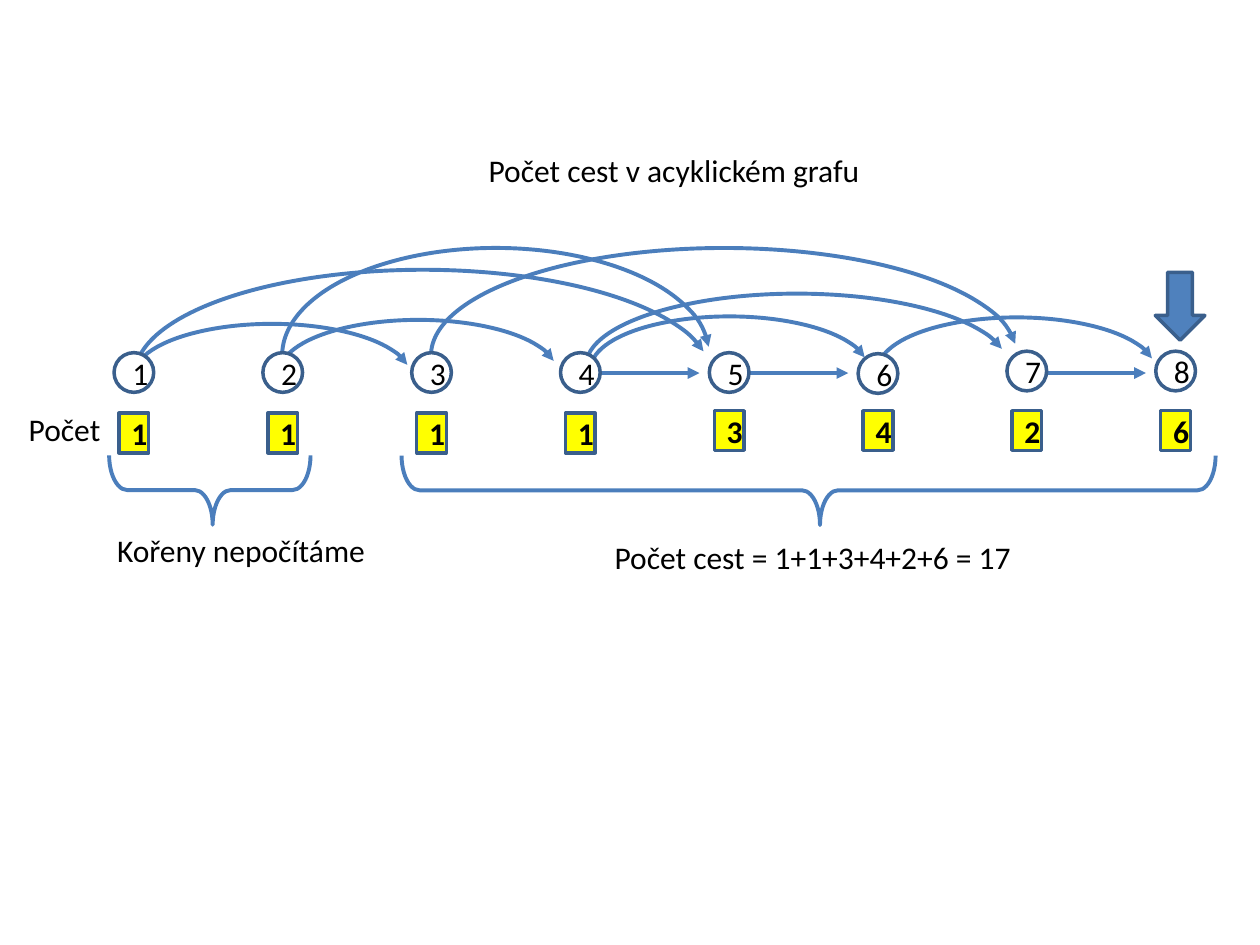
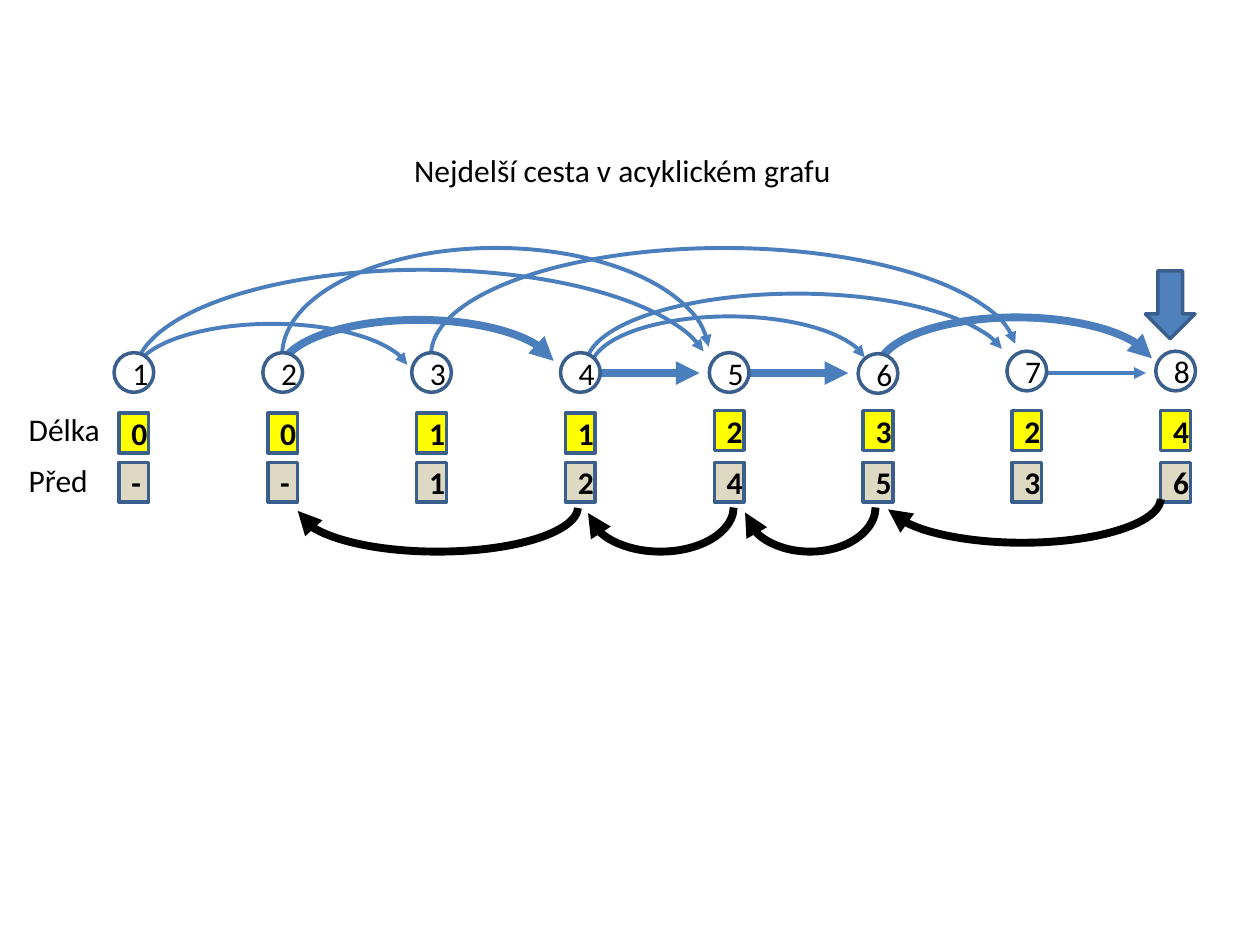
from lxml import etree
from pptx import Presentation
from pptx import util as u
from pptx.dml.color import RGBColor
from pptx.enum import shapes, text
from pptx.oxml.ns import qn

COLORS = {
    "edge": "4B7EBC",
    "outline": "3A5F8C",
    "marker": "4F81BD",
    "node": "FFFFFF",
    "value": "FFFF00",
    "predecessor": "DDD9C3",
    "black": "000000",
}
FONT = "Calibri"
FONT_SIZE = 18
THIN, THICK, OUTLINE = 2.25, 4.5, 2

# Lengths are in centimetres.
PITCH = 3
NODE_LEFT, NODE_SIZE = 2.3, 0.8
NODE_TOPS = [7.11, 7.11, 7.11, 7.11, 7.11, 7.13, 7.08, 7.08]
CELL_LEFT, CELL_WIDTH, CELL_HEIGHT = 2.4, 0.6, 0.8
VALUE_TOPS = [8.33] * 4 + [8.28] * 4
PREDECESSOR_TOPS = [9.32] * 8
LABEL_LEFT, LABEL_HEIGHT = 0.33, 1.02
TITLE_TOP = 2.92
EDGE_Y, EDGE_LENGTH = 7.52, 2

ARC_START, ARC_END, TALL_ARC_END = 108.25, 213.113, 214.654
# (from node, to node): (left, top, width, height, end angle)
ARC_EDGES = {
    (1, 3): (2.69, 6.53, 5.59, 2.11, ARC_END),
    (1, 5): (2.72, 5.44, 11.61, 4.24, ARC_END),
    (2, 5): (5.69, 5, 8.61, 4.32, TALL_ARC_END),
    (6, 8): (17.7, 6.4, 5.59, 2.11, ARC_END),
    (4, 6): (11.91, 6.38, 5.59, 2.11, ARC_END),
    (3, 7): (8.69, 5, 11.81, 4.32, TALL_ARC_END),
    (4, 7): (11.81, 5.92, 8.51, 2.92, ARC_END),
    (2, 4): (5.64, 6.45, 5.59, 2.11, ARC_END),
}
STRAIGHT_EDGES = [(4, 5), (5, 6), (7, 8)]
LONGEST_PATH = [(2, 4), (4, 5), (5, 6), (6, 8)]
BACKTRACK_ARCS = [
    (17.81, 9.14, 5.59, 1.8, ARC_END),
    (15.01, 9.32, 2.64, 1.8, ARC_END),
    (11.84, 9.32, 2.95, 1.8, ARC_END),
    (5.99, 9.32, 5.66, 1.8, 215.038),
]


def rgb(color):
    return RGBColor.from_string(COLORS[color])


def format_line(line, color, width):
    line.color.rgb = rgb(color)
    line.width = u.Pt(width)


def add_arrowhead(element):
    outline = element.spPr.find(qn("a:ln"))
    etree.SubElement(outline, qn("a:tailEnd"), type="triangle")


def format_text(text_frame, content, bold=False):
    text_frame.text = content
    font = text_frame.paragraphs[0].runs[0].font
    font.name = FONT
    font.size = u.Pt(FONT_SIZE)
    font.bold = bold
    font.color.rgb = rgb("black")


def add_shape(slide, kind, box, fill=None, line="outline", width=OUTLINE):
    shape = slide.shapes.add_shape(kind, *map(u.Cm, box))
    shape.shadow.inherit = False
    if fill:
        shape.fill.solid()
        shape.fill.fore_color.rgb = rgb(fill)
    else:
        shape.fill.background()
    format_line(shape.line, line, width)
    return shape


def add_label(slide, content, left, top, width):
    box = slide.shapes.add_textbox(*map(u.Cm, (left, top, width, LABEL_HEIGHT)))
    box.text_frame.word_wrap = False
    box.text_frame.auto_size = text.MSO_AUTO_SIZE.SHAPE_TO_FIT_TEXT
    format_text(box.text_frame, content)


def add_row(slide, kind, contents, left, tops, size, fill, bold=True):
    """Place one captioned shape under or at each graph node."""
    for index, (content, top) in enumerate(zip(contents, tops)):
        box = (left + index * PITCH, top, *size)
        shape = add_shape(slide, kind, box, fill)
        format_text(shape.text_frame, content, bold)
        shape.text_frame.paragraphs[0].alignment = text.PP_ALIGN.CENTER
        shape.text_frame.vertical_anchor = text.MSO_ANCHOR.MIDDLE


def add_cells(slide, contents, tops, fill):
    add_row(slide, shapes.MSO_SHAPE.RECTANGLE, contents, CELL_LEFT, tops,
            (CELL_WIDTH, CELL_HEIGHT), fill)


def add_arc(slide, arc, color="edge", width=THIN, rotation=0):
    *box, end = arc
    shape = add_shape(slide, shapes.MSO_SHAPE.ARC, box, line=color, width=width)
    shape.adjustments[0] = ARC_START
    shape.adjustments[1] = end
    shape.rotation = rotation
    add_arrowhead(shape._element)


def add_straight_edge(slide, node, width):
    start = NODE_LEFT + (node - 1) * PITCH + NODE_SIZE
    ends = (start, EDGE_Y, start + EDGE_LENGTH, EDGE_Y)
    connector = slide.shapes.add_connector(
        shapes.MSO_CONNECTOR.STRAIGHT, *map(u.Cm, ends))
    format_line(connector.line, "edge", width)
    add_arrowhead(connector._element)
    etree.SubElement(connector._element.spPr, qn("a:effectLst"))


def add_brace(slide, box):
    brace = add_shape(slide, shapes.MSO_SHAPE.RIGHT_BRACE, box,
                      line="edge", width=THIN)
    brace.adjustments[0] = 0.259
    brace.adjustments[1] = 0.486
    brace.rotation = 90


def add_graph(slide, thick_edges=()):
    def width(edge):
        return THICK if edge in thick_edges else THIN

    for edge, arc in ARC_EDGES.items():
        add_arc(slide, arc, width=width(edge))
    for edge in STRAIGHT_EDGES:
        add_straight_edge(slide, edge[0], width(edge))
    add_row(slide, shapes.MSO_SHAPE.OVAL, "12345678", NODE_LEFT, NODE_TOPS,
            (NODE_SIZE, NODE_SIZE), "node", bold=False)


def add_marker(slide, left, top):
    add_shape(slide, shapes.MSO_SHAPE.DOWN_ARROW, (left, top, 1, 1.37), "marker")


def add_path_count_slide(slide):
    add_graph(slide)
    add_cells(slide, "11113426", VALUE_TOPS, "value")
    add_marker(slide, 23.29, 5.49)
    add_label(slide, "Počet cest v acyklickém grafu", 9.6, TITLE_TOP, 8.08)
    add_label(slide, "Počet", LABEL_LEFT, 8.15, 1.98)
    add_brace(slide, (15.6, 1.68, 1.4, 16.41))
    add_label(slide, "Počet cest = 1+1+3+4+2+6 = 17", 12.14, 10.72, 8.61)
    add_brace(slide, (3.53, 7.85, 1.4, 4.06))
    add_label(slide, "Kořeny nepočítáme", 2.11, 10.59, 5.56)


def add_longest_path_slide(slide):
    add_graph(slide, LONGEST_PATH)
    add_cells(slide, "00112324", VALUE_TOPS, "value")
    add_marker(slide, 23.09, 5.46)
    add_label(slide, "Nejdelší cesta v acyklickém grafu", 8.1, TITLE_TOP, 8.99)
    add_cells(slide, "--124536", PREDECESSOR_TOPS, "predecessor")
    add_label(slide, "Před", LABEL_LEFT, 9.17, 1.73)
    add_label(slide, "Délka", LABEL_LEFT, 8.15, 1.96)
    for arc in BACKTRACK_ARCS:
        add_arc(slide, arc, "black", THICK, rotation=180)


def main():
    presentation = Presentation()
    presentation.slide_width = u.Cm(25.4)
    presentation.slide_height = u.Cm(19.05)
    blank = presentation.slide_layouts[6]
    for fill_slide in (add_path_count_slide, add_longest_path_slide):
        fill_slide(presentation.slides.add_slide(blank))
    presentation.save("out.pptx")


if __name__ == "__main__":
    main()
